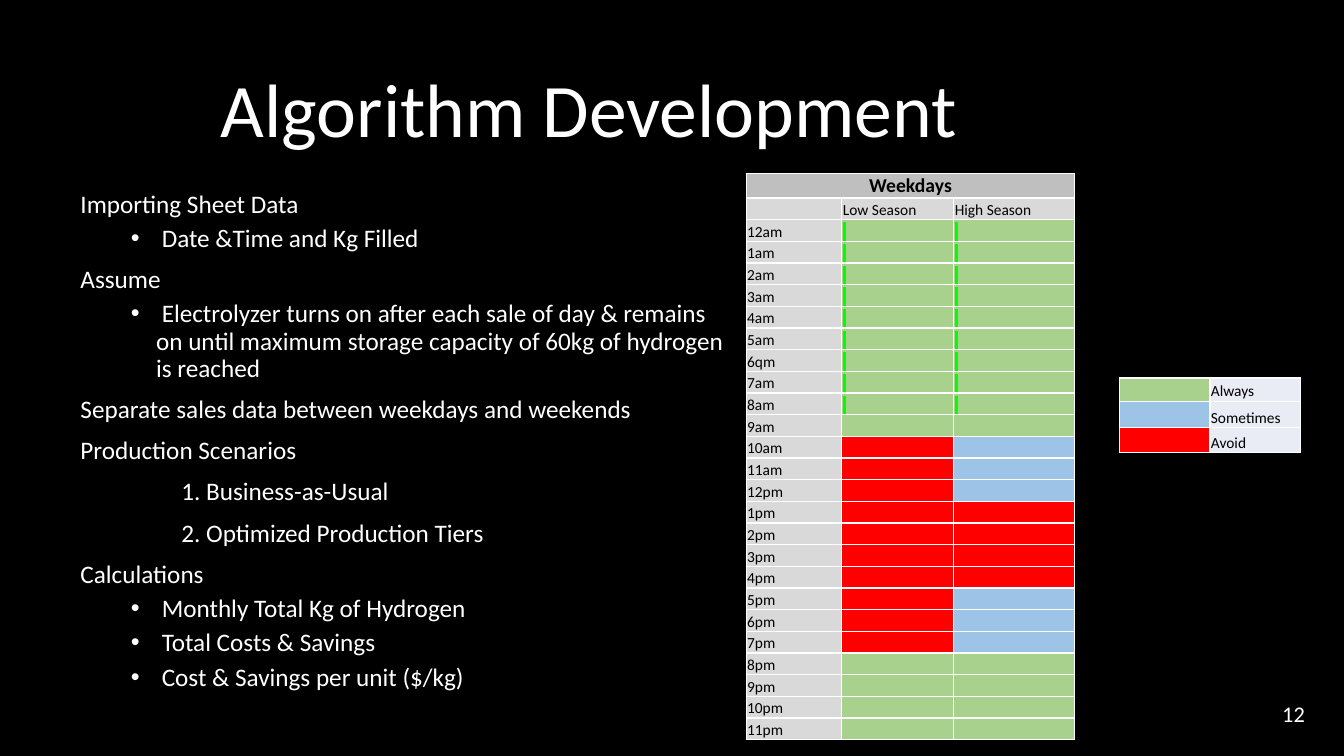
from pptx import Presentation
from pptx import oxml
from pptx import util as u
from pptx.dml import color
from pptx.enum import text
from pptx.oxml import ns

FONT = "Calibri"
WHITE, BLACK = "FFFFFF", "000000"
ALWAYS, SOMETIMES, AVOID = "A9D18E", "9DC3E6", "FF0000"
HEADING_FILL, LABEL_FILL, LEGEND_FILL = "BFBFBF", "D9D9D9", "E9EBF5"
MARKER = "00FF00"
HOURS = ["12am", "1am", "2am", "3am", "4am", "5am", "6qm", "7am", "8am", "9am", "10am", "11am",
         "12pm", "1pm", "2pm", "3pm", "4pm", "5pm", "6pm", "7pm", "8pm", "9pm", "10pm", "11pm"]
LOW_SEASON = [ALWAYS] * 10 + [AVOID] * 10 + [ALWAYS] * 4
HIGH_SEASON = [ALWAYS] * 10 + [SOMETIMES] * 3 + [AVOID] * 4 + [SOMETIMES] * 3 + [ALWAYS] * 4
MARKED_HOURS = 9
OUTLINE = [
    ("plain", "Importing Sheet Data"),
    ("bullet", " Date &Time and Kg Filled"),
    ("plain", "Assume"),
    ("bullet", " Electrolyzer turns on after each sale of day & remains on until maximum "
               "storage capacity of 60kg of hydrogen is reached"),
    ("plain", "Separate sales data between weekdays and weekends"),
    ("plain", "Production Scenarios"),
    ("step", "1. Business-as-Usual"),
    ("step", "2. Optimized Production Tiers"),
    ("plain", "Calculations"),
    ("bullet", " Monthly Total Kg of Hydrogen"),
    ("bullet", " Total Costs & Savings"),
    ("bullet", " Cost & Savings per unit ($/kg)"),
]


def rgb(value):
    return color.RGBColor.from_string(value)


def inches(box):
    return [u.Inches(length) for length in box]


def xml(tag, inner="", attributes=""):
    return oxml.parse_xml(f'<a:{tag} {ns.nsdecls("a")} {attributes}>{inner}</a:{tag}>')


def solid(value):
    return f'<a:solidFill><a:srgbClr val="{value}"/></a:solidFill>'


def format_runs(paragraph, size, ink, bold=False):
    for run in paragraph.runs:
        run.font.name = FONT
        run.font.size = u.Pt(size)
        run.font.bold = bold
        run.font.color.rgb = rgb(ink)


def add_title(slide, box, words):
    title = slide.shapes.title
    title.left, title.top, title.width, title.height = inches(box)
    frame = title.text_frame
    frame.text = words
    frame.vertical_anchor = text.MSO_ANCHOR.MIDDLE
    paragraph = frame.paragraphs[0]
    paragraph.alignment = text.PP_ALIGN.LEFT
    paragraph.line_spacing = 0.9
    format_runs(paragraph, 54, WHITE)


def add_outline(slide, box, items):
    frame = slide.shapes.add_textbox(*inches(box)).text_frame
    frame.word_wrap = True
    frame.text = "\n".join(words for _, words in items)
    for index, (paragraph, (kind, _)) in enumerate(zip(frame.paragraphs, items)):
        paragraph.line_spacing = 0.9
        if index:
            paragraph.space_before = u.Pt(5 if kind == "bullet" else 10)
        properties = paragraph._p.get_or_add_pPr()
        if kind == "bullet":
            paragraph.level = 1
            properties.set("marL", str(u.Inches(0.75)))
            properties.set("indent", str(u.Inches(-0.25)))
            properties.append(xml("buFont", attributes='typeface="Arial"'))
            properties.append(xml("buChar", attributes='char="•"'))
        elif kind == "step":
            properties.set("marL", str(u.Inches(1)))
        format_runs(paragraph, 18, WHITE)


def add_page_number(slide, box, number):
    frame = slide.shapes.add_textbox(*inches(box)).text_frame
    frame.word_wrap = True
    frame.vertical_anchor = text.MSO_ANCHOR.MIDDLE
    frame.text = number
    frame.paragraphs[0].alignment = text.PP_ALIGN.RIGHT
    format_runs(frame.paragraphs[0], 16, WHITE)


def fill_cell(cell, fill, words="", size=11, bold=False):
    cell.margin_left = cell.margin_right = cell.margin_top = u.Inches(0.01)
    cell.margin_bottom = 0
    cell.vertical_anchor = text.MSO_ANCHOR.BOTTOM
    cell.text_frame.text = words
    paragraph = cell.text_frame.paragraphs[0]
    format_runs(paragraph, size, BLACK, bold)
    if not words:
        paragraph._p.append(xml("endParaRPr", attributes=f'sz="{size * 100}"'))
    properties = cell._tc.get_or_add_tcPr()
    for side in ("lnL", "lnR", "lnT", "lnB"):
        properties.append(xml(side, solid(WHITE), f'w="{u.Pt(1)}"'))
    cell.fill.solid()
    cell.fill.fore_color.rgb = rgb(fill)


def mark_cell(cell):
    paragraph = cell.text_frame.paragraphs[0]
    paragraph.text = " "
    format_runs(paragraph, 11, BLACK)
    highlight = xml("highlight", f'<a:srgbClr val="{MARKER}"/>')
    paragraph.runs[0]._r.rPr.find(ns.qn("a:solidFill")).addnext(highlight)


def add_grid(slide, box, widths, heights):
    table = slide.shapes.add_table(len(heights), len(widths), *inches(box)).table
    table.first_row = table.horz_banding = False
    for column, width in zip(table.columns, widths):
        column.width = u.Inches(width)
    for row, height in zip(table.rows, heights):
        row.height = u.Inches(height)
    return table


def add_schedule(slide, box):
    heading_height = 0.24
    hour_height = (box[3] - heading_height) / (len(HOURS) + 1)
    heights = [heading_height] + [hour_height] * (len(HOURS) + 1)
    table = add_grid(slide, box, [0.95, 1.11, 1.2], heights)
    for column, words in enumerate(["Weekdays", "", ""]):
        fill_cell(table.cell(0, column), HEADING_FILL, words, 14, True)
    table.cell(0, 0).merge(table.cell(0, 2))
    table.cell(0, 0).text_frame.paragraphs[0].alignment = text.PP_ALIGN.CENTER
    for column, words in enumerate(["", "Low Season", "High Season"]):
        fill_cell(table.cell(1, column), LABEL_FILL, words)
    for index, (hour, *tiers) in enumerate(zip(HOURS, LOW_SEASON, HIGH_SEASON)):
        fill_cell(table.cell(index + 2, 0), LABEL_FILL, hour)
        for column, tier in enumerate(tiers, 1):
            cell = table.cell(index + 2, column)
            fill_cell(cell, tier)
            if index < MARKED_HOURS:
                mark_cell(cell)


def add_legend(slide, box):
    table = add_grid(slide, box, [box[2] / 2] * 2, [0.23, 0.26, 0.25])
    entries = [(ALWAYS, "Always"), (SOMETIMES, "Sometimes"), (AVOID, "Avoid")]
    for row, (tier, words) in enumerate(entries):
        fill_cell(table.cell(row, 0), tier)
        fill_cell(table.cell(row, 1), LEGEND_FILL, words)


def build_algorithm_slide(presentation):
    slide = presentation.slides.add_slide(presentation.slide_layouts[5])
    slide.background.fill.solid()
    slide.background.fill.fore_color.rgb = rgb(BLACK)
    add_title(slide, (2.09, 0.4, 10.32, 1.45), "Algorithm Development")
    add_outline(slide, (0.7, 1.85, 6.7, 5.1), OUTLINE)
    add_schedule(slide, (7.4, 1.72, 3.26, 5.62))
    add_legend(slide, (11.1, 3.75, 1.8, 0.74))
    add_page_number(slide, (10.04, 6.88, 3, 0.4), "12")


def main():
    presentation = Presentation()
    presentation.slide_width = u.Inches(13.33)
    presentation.slide_height = u.Inches(7.5)
    build_algorithm_slide(presentation)
    presentation.save("out.pptx")


if __name__ == "__main__":
    main()
